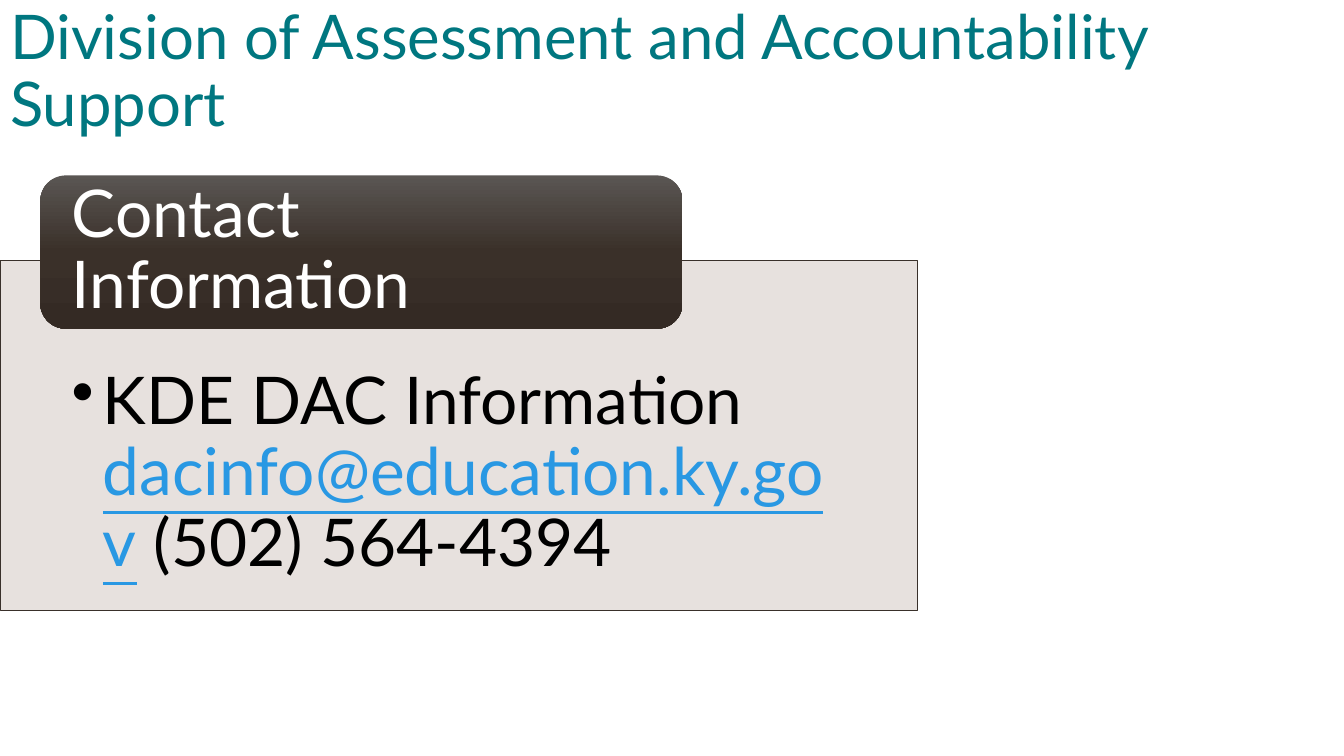
from copy import deepcopy
from lxml.etree import SubElement
from pptx import Presentation
from pptx.dml.color import RGBColor
from pptx.enum.shapes import MSO_SHAPE
from pptx.enum.text import MSO_ANCHOR, PP_ALIGN
from pptx.oxml.ns import qn
from pptx.util import Inches, Pt

TEAL = RGBColor(0x00, 0x77, 0x80)
SAND = RGBColor(0xE5, 0xDE, 0xDB)
BROWN = RGBColor(0x39, 0x30, 0x2A)
BLUE = RGBColor(0x29, 0x98, 0xE3)
BLACK = RGBColor(0, 0, 0)
WHITE = RGBColor(0xFF, 0xFF, 0xFF)
SHADES = [
    (0, RGBColor(0x5A, 0x56, 0x53)),
    (0.5, RGBColor(0x3A, 0x30, 0x29)),
    (1, RGBColor(0x34, 0x2A, 0x24)),
]


def add_run(para, text, size, color):
    run = para.add_run()
    run.text = text
    run.font.name = "Lato"
    run.font.size = Pt(size)
    run.font.color.rgb = color
    return run


def set_frame(shape, anchor, left, top, right, bottom):
    frame = shape.text_frame
    frame.word_wrap = True
    frame.vertical_anchor = anchor
    frame.margin_left = Inches(left)
    frame.margin_top = Inches(top)
    frame.margin_right = Inches(right)
    frame.margin_bottom = Inches(bottom)
    para = frame.paragraphs[0]
    para.alignment = PP_ALIGN.LEFT
    para.line_spacing = 0.9
    return para


deck = Presentation()
deck.slide_width = Inches(13.33)
deck.slide_height = Inches(7.5)
slide = deck.slides.add_slide(deck.slide_layouts[5])

title = slide.shapes.title
title.left, title.top = Inches(0), Inches(0)
title.width, title.height = Inches(12.15), Inches(1.45)
para = set_frame(title, MSO_ANCHOR.MIDDLE, 0.1, 0.05, 0.1, 0.05)
add_run(para, "Division of Assessment and Accountability Support", 44, TEAL)

panel = slide.shapes.add_shape(
    MSO_SHAPE.RECTANGLE, Inches(0), Inches(2.58), Inches(9.1), Inches(3.48))
panel.shadow.inherit = False
panel.fill.solid()
panel.fill.fore_color.rgb = SAND
tone = panel._element.spPr.find(qn("a:solidFill")).find(qn("a:srgbClr"))
SubElement(tone, qn("a:alpha"), val="90000")
panel.line.color.rgb = BROWN
panel.line.width = Pt(0.5)
para = set_frame(panel, MSO_ANCHOR.TOP, 0.71, 1.07, 0.71, 0.37)
props = para._p.get_or_add_pPr()
props.set("marL", str(Inches(0.31)))
props.set("indent", str(-Inches(0.31)))
SubElement(props, qn("a:buChar"), char="•")
add_run(para, "KDE DAC Information ", 47, BLACK)
mail = add_run(para, "dacinfo@education.ky.gov", 47, BLUE)
mail.font.underline = True
add_run(para, " (502) 564-4394", 47, BLACK)

label = slide.shapes.add_shape(
    MSO_SHAPE.ROUNDED_RECTANGLE, Inches(0.4), Inches(1.74), Inches(6.37), Inches(1.52))
label.shadow.inherit = False
label.line.fill.background()
label.fill.gradient()
label.fill.gradient_angle = 270
stops = label._element.spPr.find(qn("a:gradFill")).find(qn("a:gsLst"))
stops.append(deepcopy(stops[0]))
for stop, (place, color) in zip(label.fill.gradient_stops, SHADES):
    stop.position = place
    stop.color.rgb = color
para = set_frame(label, MSO_ANCHOR.MIDDLE, 0.24, 0, 0.4, 0)
add_run(para, "Contact Information", 47, WHITE)

deck.save("out.pptx")
